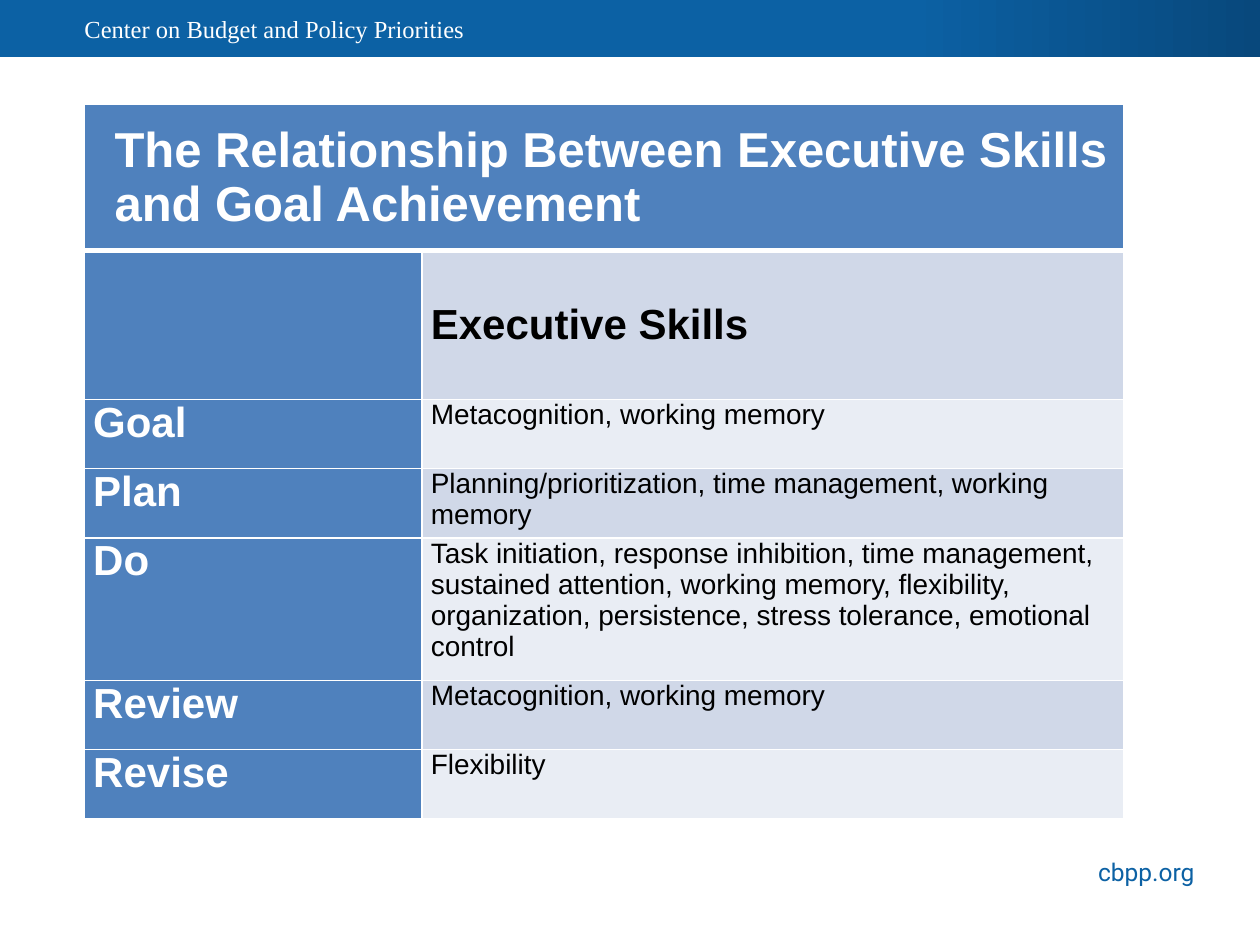
import pptx
import pptx.dml.color
import pptx.enum.shapes
import pptx.enum.text
import pptx.oxml
import pptx.oxml.ns
import pptx.util
from pptx.util import Inches

RGBColor = pptx.dml.color.RGBColor
Anchor = pptx.enum.text.MSO_ANCHOR
Align = pptx.enum.text.PP_ALIGN

WHITE = RGBColor(0xFF, 0xFF, 0xFF)
BLACK = RGBColor(0, 0, 0)
BRAND_BLUE = RGBColor(0x0C, 0x61, 0xA4)
DARK_BLUE = RGBColor(0x08, 0x48, 0x7C)
TABLE_BLUE = RGBColor(0x4F, 0x81, 0xBD)
BANDS = [RGBColor(0xD0, 0xD8, 0xE8), RGBColor(0xE9, 0xED, 0xF4)]


def write(frame, text, size, color, font="Arial", bold=False, align=Align.LEFT):
    """Fill a text frame, one paragraph for each line of text."""
    frame.text = text
    for para in frame.paragraphs:
        para.alignment = align
        para.font.size = pptx.util.Pt(size)
        para.font.name = font
        para.font.bold = bold
        para.font.color.rgb = color


def style_cell(cell, fill, anchor=Anchor.TOP, left=0.07, bottom_width=1):
    """Set the margins, white borders and fill of a cell."""
    cell.margin_left, cell.margin_right = Inches(left), Inches(0.07)
    cell.margin_top = cell.margin_bottom = 0
    cell.vertical_anchor = anchor
    properties = cell._tc.get_or_add_tcPr()
    for side, width in (("L", 1), ("R", 1), ("T", 1), ("B", bottom_width)):
        properties.append(pptx.oxml.parse_xml(
            f'<a:ln{side} {pptx.oxml.ns.nsdecls("a")} w="{pptx.util.Pt(width)}">'
            f'<a:solidFill><a:srgbClr val="{WHITE}"/></a:solidFill></a:ln{side}>'))
    cell.fill.solid()
    cell.fill.fore_color.rgb = fill


deck = pptx.Presentation()
deck.slide_width, deck.slide_height = Inches(10), Inches(7.5)
page = deck.slides.add_slide(deck.slide_layouts[6])

# Header band
band = page.shapes.add_shape(pptx.enum.shapes.MSO_SHAPE.RECTANGLE,
                             0, 0, Inches(10.01), Inches(0.45))
band.shadow.inherit = False
band.line.fill.background()
band.fill.gradient()
band.fill.gradient_angle = 0
for stop, position, color in zip(band.fill.gradient_stops, (0.72, 1), (BRAND_BLUE, DARK_BLUE)):
    stop.position = position
    stop.color.rgb = color

header = page.shapes.add_textbox(Inches(0.67), Inches(0.06), Inches(6.12), Inches(0.42))
header.text_frame.word_wrap = True
header.text_frame.margin_left = header.text_frame.margin_right = 0
write(header.text_frame, "Center on Budget and Policy Priorities", 14, WHITE,
      font="Times New Roman")

# Web address
address = page.shapes.add_textbox(Inches(8.08), Inches(6.75), Inches(1.5), Inches(0.34))
address.fill.solid()
address.fill.fore_color.rgb = WHITE
address.text_frame.word_wrap = True
write(address.text_frame, "cbpp.org", 14, BRAND_BLUE, font="Roboto", align=Align.RIGHT)

# Skills table
stages = [
    ("", "Executive Skills", 1.18),
    ("Goal", "Metacognition, working memory", 0.55),
    ("Plan", "Planning/prioritization, time management, working memory", 0.55),
    ("Do", "Task initiation, response inhibition, time management, sustained attention, "
           "working memory, flexibility, organization, persistence, stress tolerance, "
           "emotional control", 1.13),
    ("Review", "Metacognition, working memory", 0.55),
    ("Revise", "Flexibility", 0.55),
]
table = page.shapes.add_table(len(stages) + 1, 2, Inches(0.67), Inches(0.83),
                              Inches(8.25), Inches(5.67)).table
table.columns[0].width, table.columns[1].width = Inches(2.68), Inches(5.57)

table.rows[0].height = Inches(1.16)
title = table.cell(0, 0)
title.merge(table.cell(0, 1))
for cell in table.rows[0].cells:
    style_cell(cell, TABLE_BLUE, anchor=Anchor.MIDDLE, left=0.24, bottom_width=3)
write(title.text_frame,
      "The Relationship Between Executive Skills\nand Goal Achievement",
      28, WHITE, bold=True)

for index, (stage, skills, height) in enumerate(stages):
    row = table.rows[index + 1]
    row.height = Inches(height)
    stage_cell, skills_cell = row.cells
    is_heading = index == 0
    style_cell(stage_cell, TABLE_BLUE)
    write(stage_cell.text_frame, stage, 24, WHITE, bold=True)
    style_cell(skills_cell, BANDS[index % 2],
               anchor=Anchor.MIDDLE if is_heading else Anchor.TOP)
    write(skills_cell.text_frame, skills, 24 if is_heading else 16, BLACK, bold=is_heading)

deck.save("out.pptx")
